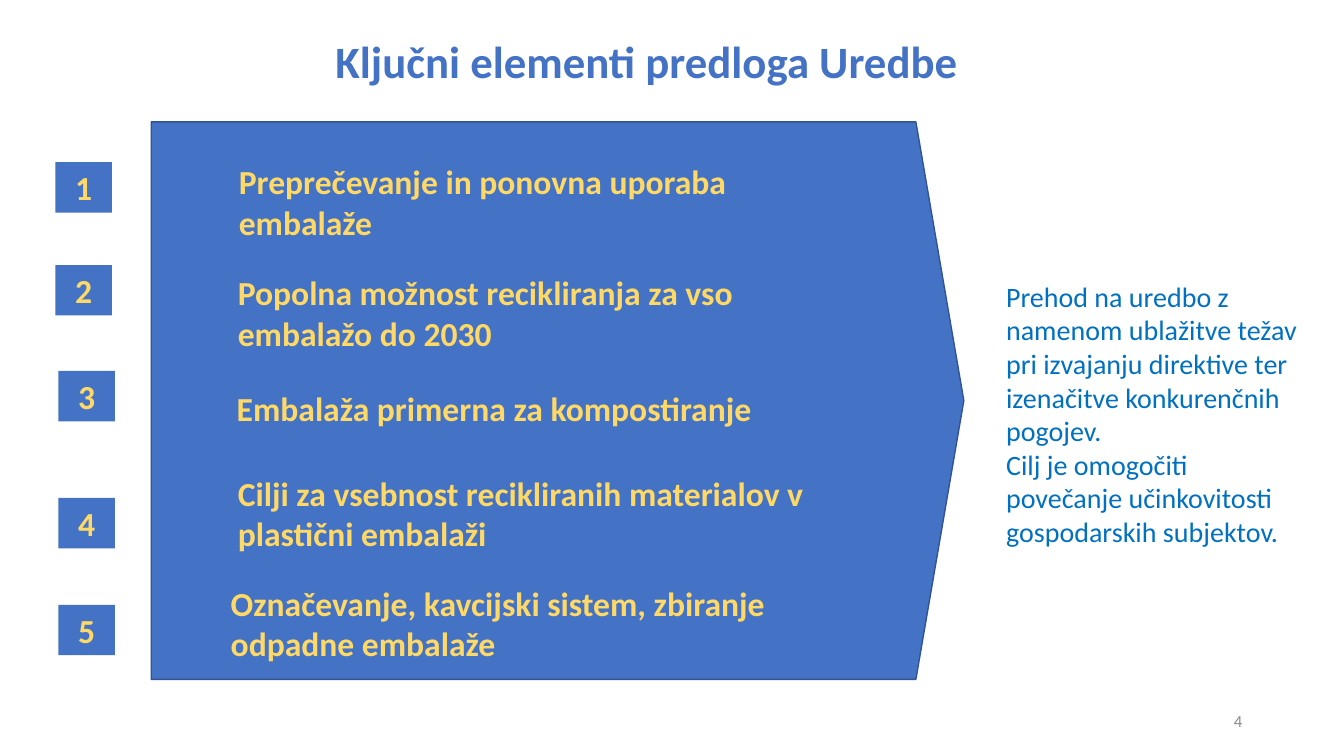
import pptx
import pptx.dml.color
import pptx.enum.shapes
import pptx.enum.text
import pptx.util

EMU_PER_PX = 9144
FONT = "Calibri"
BLUE, DARK_BLUE, TEXT_BLUE = "4472C4", "325491", "0070C0"
GOLD, GRAY = "FFD966", "8C8C8C"
ALIGN = pptx.enum.text.PP_ALIGN
ANCHOR = pptx.enum.text.MSO_ANCHOR
SHAPE = pptx.enum.shapes.MSO_SHAPE

BADGE_SIZE = (56, 50)
ELEMENTS = [
    ("Preprečevanje in ponovna uporaba embalaže", (227, 155, 622, 91), (55, 161)),
    ("Popolna možnost recikliranja za vso embalažo do 2030", (226, 265, 641, 91), (55, 263)),
    ("Embalaža primerna za kompostiranje", (225, 380, 650, 50), (58, 368)),
    ("Cilji za vsebnost recikliranih materialov v plastični embalaži",
     (226, 464, 641, 91), (58, 494)),
    ("Označevanje, kavcijski sistem, zbiranje odpadne embalaže",
     (219, 573, 639, 91), (58, 600)),
]
PURPOSE = [
    "Prehod na uredbo z namenom ublažitve težav pri izvajanju direktive ter "
    "izenačitve konkurenčnih pogojev.",
    "Cilj je omogočiti povečanje učinkovitosti gospodarskih subjektov.",
]


def px(length):
    return pptx.util.Emu(length * EMU_PER_PX)


def color(value):
    return pptx.dml.color.RGBColor.from_string(value)


def write(shape, *lines, size=24, fill=GOLD, bold=False, align=ALIGN.LEFT, anchor=ANCHOR.TOP):
    frame = shape.text_frame
    frame.word_wrap = True
    frame.vertical_anchor = anchor
    for index, line in enumerate(lines):
        paragraph = frame.add_paragraph() if index else frame.paragraphs[0]
        paragraph.alignment = align
        run = paragraph.add_run()
        run.text = line
        run.font.name = FONT
        run.font.size = pptx.util.Pt(size)
        run.font.bold = bold
        run.font.color.rgb = color(fill)


class SlideBuilder:
    """Draws styled elements on the current slide."""

    def __init__(self, presentation):
        self.slide = presentation.slides.add_slide(presentation.slide_layouts[6])

    def text(self, box, *lines, **text_format):
        shape = self.slide.shapes.add_textbox(*map(px, box))
        write(shape, *lines, **text_format)

    def block(self, kind, box, line=None):
        shape = self.slide.shapes.add_shape(kind, *map(px, box))
        shape.shadow.inherit = False
        shape.fill.solid()
        shape.fill.fore_color.rgb = color(BLUE)
        if line:
            shape.line.color.rgb = color(line)
            shape.line.width = pptx.util.Pt(1)
        else:
            shape.line.fill.background()
        return shape

    def arrow(self, box, point):
        shape = self.block(SHAPE.PENTAGON, box, line=DARK_BLUE)
        shape.adjustments[0] = point

    def badge(self, position, number):
        shape = self.block(SHAPE.RECTANGLE, (*position, *BADGE_SIZE))
        write(shape, str(number), bold=True, align=ALIGN.CENTER)


def main():
    presentation = pptx.Presentation()
    presentation.slide_width = pptx.util.Inches(13.33)
    presentation.slide_height = pptx.util.Inches(7.5)

    builder = SlideBuilder(presentation)
    builder.arrow((150, 121, 806, 553), point=0.086)
    for number, (label, label_box, badge_position) in enumerate(ELEMENTS, start=1):
        builder.text(label_box, label, bold=True)
        builder.badge(badge_position, number)
    builder.text((988, 272, 315, 279), *PURPOSE, size=20, fill=TEXT_BLUE)
    builder.text((271, 29, 741, 64), "Ključni elementi predloga Uredbe",
                 size=32, fill=BLUE, bold=True, align=ALIGN.CENTER)
    builder.text((942, 695, 300, 40), "4",
                 size=12, fill=GRAY, align=ALIGN.RIGHT, anchor=ANCHOR.MIDDLE)
    presentation.save("out.pptx")


if __name__ == "__main__":
    main()
